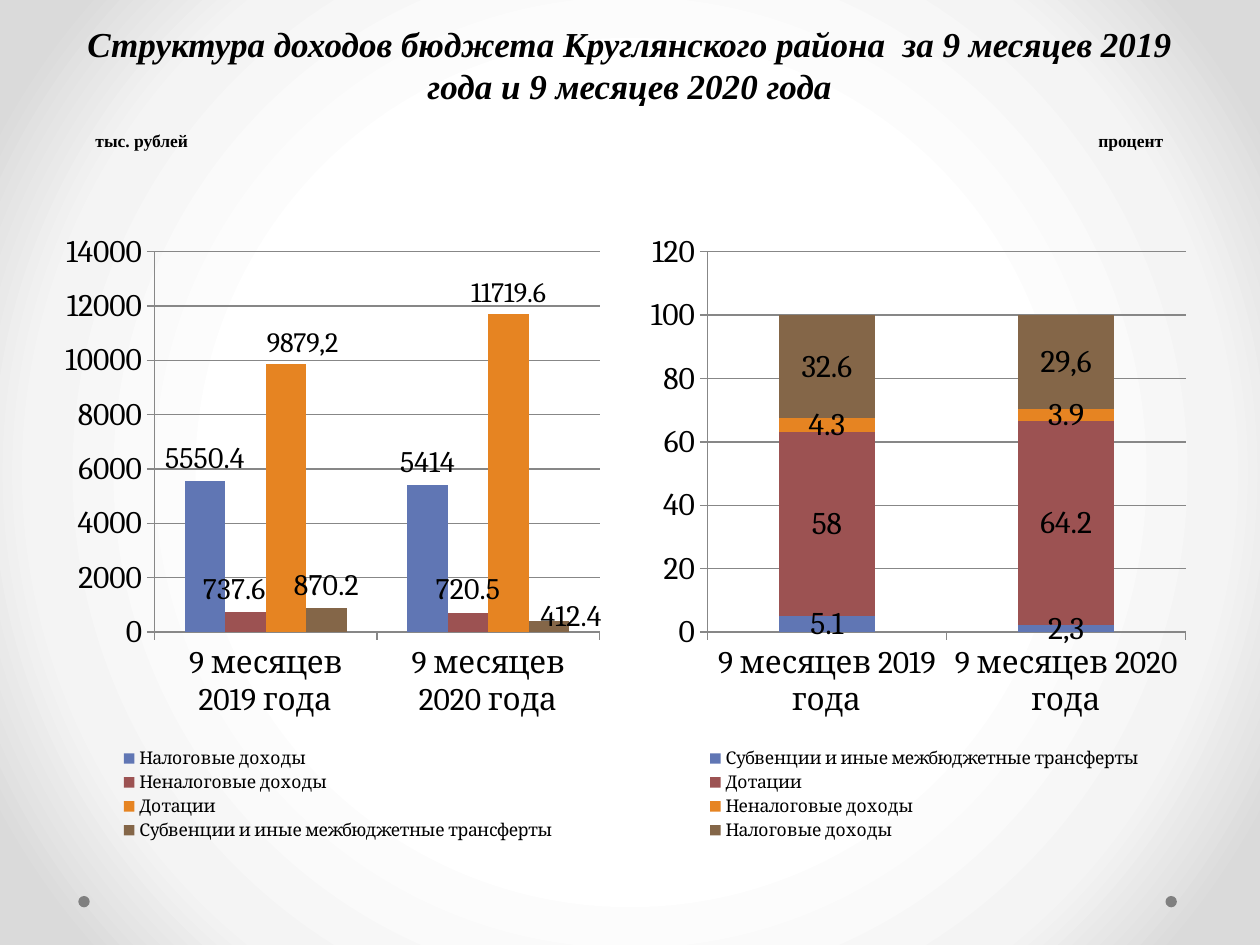
import dataclasses

import pptx
import pptx.chart.data
import pptx.dml.color
import pptx.enum.chart
import pptx.enum.shapes
import pptx.enum.text
import pptx.oxml
import pptx.oxml.ns
import pptx.util

Pt = pptx.util.Pt
Kind = pptx.enum.chart.XL_CHART_TYPE
Align = pptx.enum.text.PP_ALIGN


@dataclasses.dataclass(frozen=True)
class Theme:
    ink: str = "000000"
    line: str = "878787"
    dot: str = "808080"
    fills: tuple = ("6076B4", "9C5252", "E68422", "846648")
    glow: tuple = ((50, "FFFFFF"), (76, "F4F4F4"), (92, "DADADA"))
    head: str = "Times New Roman"
    body: str = "Cambria"
    title: int = 20
    note: int = 10
    axis: int = 18
    value: int = 17
    small: int = 16


THEME = Theme()
TAX, OTHER, GRANT, SUBS = (
    "Налоговые доходы", "Неналоговые доходы", "Дотации",
    "Субвенции и иные межбюджетные трансферты")
YEARS = ("9 месяцев 2019 года", "9 месяцев 2020 года")
SUMS = ((TAX, (5550.4, 5414)), (OTHER, (737.6, 720.5)),
        (GRANT, (9879.2, 11719.6)), (SUBS, (870.2, 412.4)))
SHARES = ((SUBS, (5.1, 2.3)), (GRANT, (58, 64.2)),
          (OTHER, (4.3, 3.9)), (TAX, (32.6, 29.6)))


def color(code):
    return pptx.dml.color.RGBColor.from_string(code)


def node(tag, text=""):
    space = pptx.oxml.ns.nsdecls("a", "c")
    return pptx.oxml.parse_xml(f"<{tag} {space}>{text}</{tag}>")


def style(font, size, name=THEME.body, **flags):
    font.size, font.name = Pt(size), name
    font.color.rgb = color(THEME.ink)
    for key, flag in flags.items():
        setattr(font, key, flag)


def write(slide, text, box, size=THEME.note, align=Align.LEFT, **flags):
    shape = slide.shapes.add_textbox(*map(Pt, box))
    frame = shape.text_frame
    frame.word_wrap = True
    para = frame.paragraphs[0]
    para.alignment = align
    run = para.add_run()
    run.text = text
    style(run.font, size, THEME.head, bold=True, **flags)


def shade(slide):
    """Fill the background with a round glow from the centre."""
    slide.background.fill.gradient()
    grad = slide.element.xpath(".//p:bg//a:gradFill")[0]
    for child in list(grad):
        grad.remove(child)
    stops = "".join(f'<a:gs pos="{at * 1000}"><a:srgbClr val="{code}"/></a:gs>'
                    for at, code in THEME.glow)
    grad.append(node("a:gsLst", stops))
    path = node("a:path", '<a:fillToRect l="50000" t="50000" r="50000" b="50000"/>')
    path.set("path", "circle")
    grad.append(path)


def dot(slide, left):
    shape = slide.shapes.add_shape(
        pptx.enum.shapes.MSO_SHAPE.OVAL, Pt(left), Pt(512), Pt(6.5), Pt(6.5))
    shape.shadow.inherit = False
    shape.fill.solid()
    shape.fill.fore_color.rgb = color(THEME.dot)
    shape.line.fill.background()


def place(part, index, inner=False, **box):
    """Give a chart part a manual layout, as fractions of the chart."""
    for old in part.xpath("./c:layout"):
        part.remove(old)
    text = '<c:layoutTarget val="inner"/>' if inner else ""
    if "w" in box:
        text += '<c:xMode val="edge"/><c:yMode val="edge"/>'
    text += "".join(f'<c:{key} val="{val}"/>' for key, val in box.items())
    part.insert(index, node("c:layout", f"<c:manualLayout>{text}</c:manualLayout>"))


def draw(slide, kind, rows, left, plot, top, step, size):
    """Add a column chart; plot is the inner left edge and width."""
    data = pptx.chart.data.CategoryChartData()
    data.categories = YEARS
    for name, vals in rows:
        data.add_series(name, vals)
    chart = slide.shapes.add_chart(
        kind, Pt(left), Pt(126), Pt(318), Pt(356.5), data).chart
    chart.has_title = False
    style(chart.font, THEME.axis)
    chart.has_legend = True
    chart.legend.position = pptx.enum.chart.XL_LEGEND_POSITION.BOTTOM
    chart.legend.include_in_layout = False
    style(chart.legend.font, THEME.note)
    place(chart.element.xpath(".//c:plotArea")[0], 0, True,
          x=plot[0], y=0.05, w=plot[1], h=0.61)
    place(chart.element.xpath(".//c:legend")[0], 1,
          x=0.11, y=0.84, w=0.8, h=0.16)
    axis = chart.value_axis
    axis.minimum_scale, axis.maximum_scale, axis.major_unit = 0, top, step
    axis.has_major_gridlines = True
    for part in (axis, chart.category_axis, axis.major_gridlines):
        part.format.line.color.rgb = color(THEME.line)
        part.format.line.width = Pt(0.75)
    bars = chart.plots[0]
    bars.gap_width = 150
    bars.overlap = 100 if kind == Kind.COLUMN_STACKED else 0
    bars.vary_by_categories = False
    for series, code in zip(bars.series, THEME.fills):
        series.format.fill.solid()
        series.format.fill.fore_color.rgb = color(code)
        series.data_labels.show_value = True
        style(series.data_labels.font, size)
    return chart


def label(chart, row, col, text=None, size=THEME.value, shift=None):
    """Set one value label apart by its text, size or offset."""
    mark = chart.plots[0].series[row].points[col].data_label
    if text:
        run = mark.text_frame.paragraphs[0].add_run()
        run.text = text
        style(run.font, size)
    else:
        style(mark.font, size)
    if shift:
        part = chart.element.xpath(
            f'.//c:ser[c:idx/@val="{row}"]//c:dLbl[c:idx/@val="{col}"]')[0]
        place(part, 1, x=shift[0], y=shift[1])


def main():
    deck = pptx.Presentation()
    deck.slide_width, deck.slide_height = Pt(720), Pt(540)
    slide = deck.slides.add_slide(deck.slide_layouts[6])
    shade(slide)
    for left in (666, 44.75):
        dot(slide, left)
    write(slide, "Структура доходов бюджета Круглянского района  "
          "за 9 месяцев 2019 года и 9 месяцев 2020 года",
          (31, 9.5, 657.5, 55.5), THEME.title, Align.CENTER, italic=True)
    write(slide, "тыс. рублей", (42.5, 70.5, 77, 19.5), align=Align.CENTER)
    write(slide, "процент", (620.5, 70.5, 68, 19.5))

    share = draw(slide, Kind.COLUMN_STACKED, SHARES, 366, (0.12, 0.86),
                 120, 20, THEME.axis)
    label(share, 0, 1, "2,3", THEME.axis)
    label(share, 3, 1, "29,6", THEME.axis)

    total = draw(slide, Kind.COLUMN_CLUSTERED, SUMS, 31, (0.18, 0.8),
                 14000, 2000, THEME.value)
    label(total, 1, 0, shift=(-0.02, 0))
    label(total, 2, 0, "9879,2", THEME.small, (0.03, 0))
    label(total, 2, 1, size=THEME.small)
    label(total, 3, 1, shift=(0.04, 0.03))
    deck.save("out.pptx")


if __name__ == "__main__":
    main()
